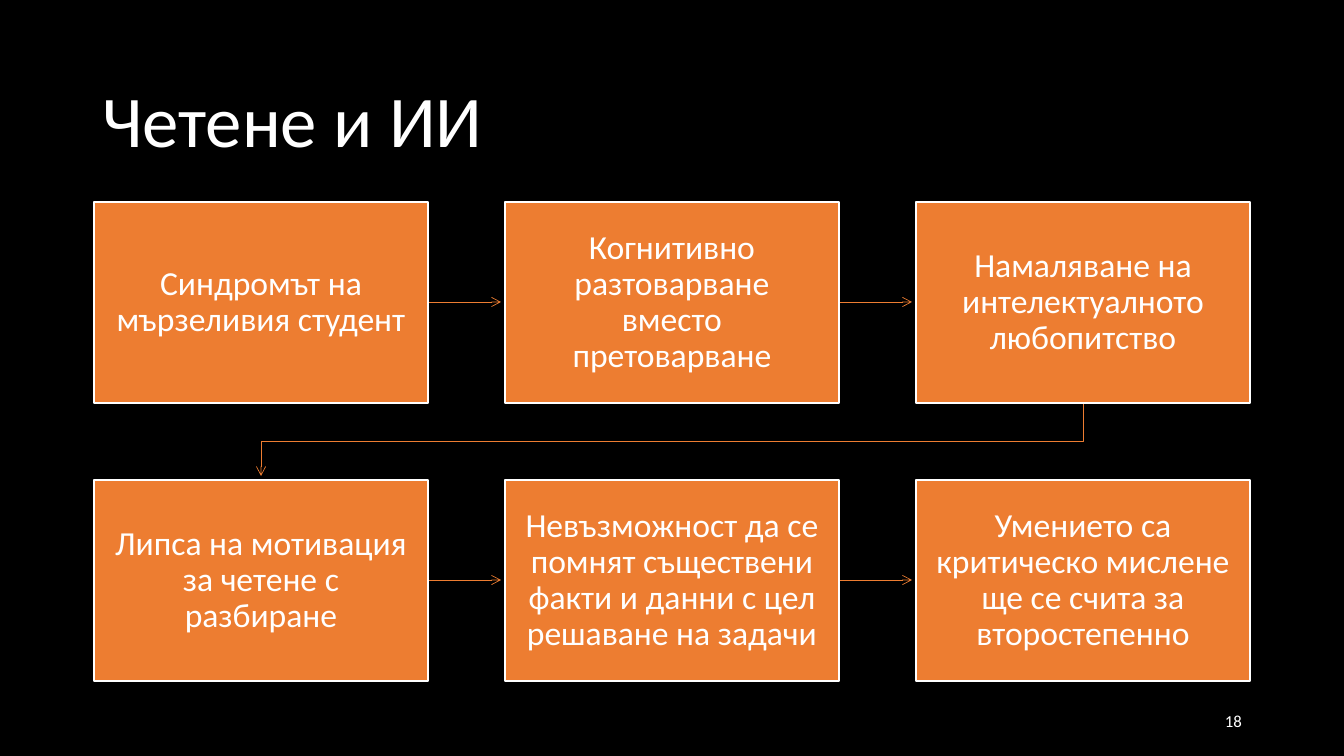
from dataclasses import dataclass

from lxml import etree
from pptx import Presentation
from pptx import util as u
from pptx.dml.color import RGBColor
from pptx.enum import shapes, text
from pptx.oxml.ns import qn

EMU_PER_PX = 914400 / 100.8


@dataclass(frozen=True)
class Theme:
    background: RGBColor = RGBColor(0x00, 0x00, 0x00)
    text: RGBColor = RGBColor(0xFF, 0xFF, 0xFF)
    accent: RGBColor = RGBColor(0xED, 0x7D, 0x31)
    font: str = "Calibri"
    title_size: int = 52
    step_size: int = 24
    number_size: int = 12


@dataclass(frozen=True)
class Step:
    label: str
    row: int
    col: int

    @property
    def left(self) -> int:
        return GRID_LEFT + self.col * COL_PITCH

    @property
    def top(self) -> int:
        return GRID_TOP + self.row * ROW_PITCH

    @property
    def center_x(self) -> int:
        return self.left + STEP_W // 2

    @property
    def center_y(self) -> int:
        return self.top + STEP_H // 2


THEME = Theme()
COLS = 3
GRID_LEFT, GRID_TOP = 94, 202
COL_PITCH, ROW_PITCH = 411, 278
STEP_W, STEP_H = 334, 201
ARROW_GAP = 4

LABELS = [
    "Синдромът на мързеливия студент",
    "Когнитивно разтоварване вместо претоварване",
    "Намаляване на интелектуалното любопитство",
    "Липса на мотивация за четене с разбиране",
    "Невъзможност да се помнят съществени факти и данни с цел решаване на задачи",
    "Умението са критическо мислене ще се счита за второстепенно",
]
STEPS = [Step(label, *divmod(i, COLS)) for i, label in enumerate(LABELS)]


def px(*lengths: int) -> list[u.Emu]:
    return [u.Emu(round(n * EMU_PER_PX)) for n in lengths]


def write(tf, content: str, size: int, align, spacing: float = 1.0) -> None:
    tf.word_wrap = True
    tf.auto_size = text.MSO_AUTO_SIZE.NONE
    tf.vertical_anchor = text.MSO_ANCHOR.MIDDLE
    p = tf.paragraphs[0]
    p.alignment = align
    p.line_spacing = spacing
    r = p.add_run()
    r.text = content
    r.font.name = THEME.font
    r.font.size = u.Pt(size)
    r.font.color.rgb = THEME.text


def add_step(slide, step: Step) -> None:
    sp = slide.shapes.add_shape(
        shapes.MSO_SHAPE.RECTANGLE, *px(step.left, step.top, STEP_W, STEP_H))
    sp.shadow.inherit = False
    sp.fill.solid()
    sp.fill.fore_color.rgb = THEME.accent
    sp.line.color.rgb = THEME.text
    sp.line.width = u.Pt(1)
    tf = sp.text_frame
    tf.margin_left, tf.margin_right, tf.margin_top, tf.margin_bottom = px(16, 16, 17, 17)
    write(tf, step.label, THEME.step_size, text.PP_ALIGN.CENTER, 0.9)
    tf.paragraphs[0].space_after = u.Pt(8.4)


def style_arrow(sp) -> None:
    sp.line.color.rgb = THEME.accent
    sp.line.width = u.Pt(0.5)
    sp_pr = sp._element.spPr
    etree.SubElement(sp_pr.find(qn("a:ln")), qn("a:tailEnd"), type="arrow")
    if sp_pr.find(qn("a:effectLst")) is None:
        etree.SubElement(sp_pr, qn("a:effectLst"))


def add_arrow(slide, start: Step, end: Step) -> None:
    """Point straight along a row, or bend through the gap to the next row."""
    if start.row == end.row:
        sp = slide.shapes.add_connector(
            shapes.MSO_CONNECTOR.STRAIGHT,
            *px(start.left + STEP_W, start.center_y, end.left - ARROW_GAP, end.center_y))
    else:
        bottom = start.top + STEP_H
        bend = (bottom + end.top) // 2
        route = [(start.center_x, bend), (end.center_x, bend),
                 (end.center_x, end.top - ARROW_GAP)]
        outline = slide.shapes.build_freeform(start.center_x, bottom, EMU_PER_PX)
        outline.add_line_segments(route, close=False)
        sp = outline.convert_to_shape()
        sp.fill.background()
    style_arrow(sp)


def main() -> None:
    prs = Presentation()
    prs.slide_width, prs.slide_height = px(1344, 756)
    s = prs.slides.add_slide(prs.slide_layouts[5])
    s.background.fill.solid()
    s.background.fill.fore_color.rgb = THEME.background

    title = s.shapes.title
    title.left, title.top, title.width, title.height = px(92, 61, 1159, 125)
    write(title.text_frame, "Четене и ИИ", THEME.title_size, text.PP_ALIGN.LEFT, 0.9)

    number = s.shapes.add_textbox(*px(950, 701, 302, 40))
    write(number.text_frame, "18", THEME.number_size, text.PP_ALIGN.RIGHT)
    number.text_frame.paragraphs[0].space_after = u.Pt(6)

    for start, end in zip(STEPS, STEPS[1:]):
        add_arrow(s, start, end)
    for step in STEPS:
        add_step(s, step)

    prs.save("out.pptx")


if __name__ == "__main__":
    main()
